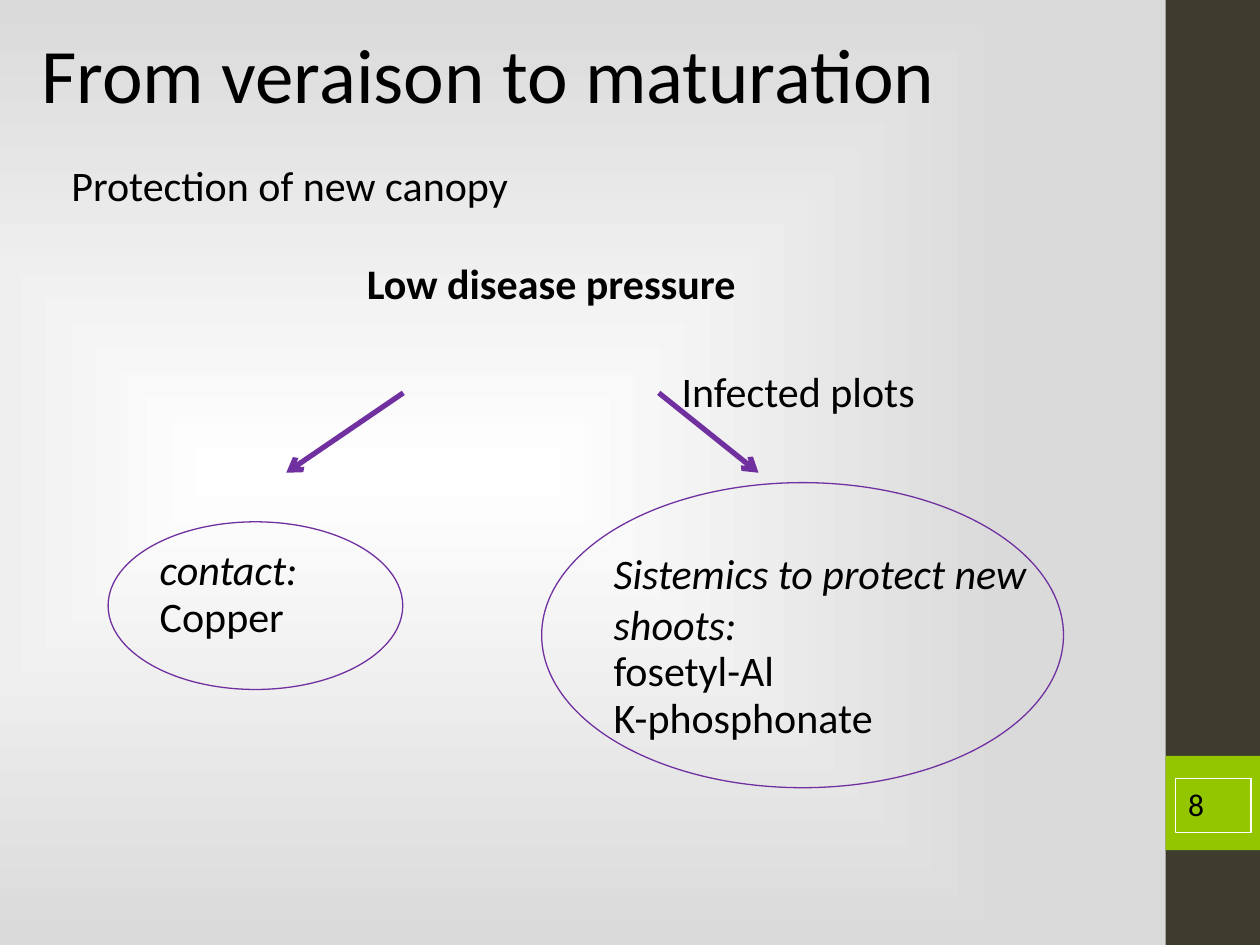
from dataclasses import dataclass

from lxml import etree
from pptx import Presentation
from pptx.dml.color import RGBColor
from pptx.enum.shapes import MSO_CONNECTOR, MSO_SHAPE
from pptx.enum.text import MSO_ANCHOR, PP_ALIGN
from pptx.oxml.ns import qn
from pptx.util import Cm, Pt

RECT, OVAL = MSO_SHAPE.RECTANGLE, MSO_SHAPE.OVAL
LINE = MSO_CONNECTOR.STRAIGHT
LEFT, MID = PP_ALIGN.LEFT, PP_ALIGN.CENTER
TOP = MSO_ANCHOR.TOP


@dataclass(frozen=True)
class Theme:
    font: str = "Calibri"
    ink: str = "000000"
    white: str = "FFFFFF"
    gray: str = "DADADA"
    dark: str = "3E3D2D"
    green: str = "94C600"
    purple: str = "7030A0"
    title: int = 44
    body: int = 24
    number: int = 18
    thin: float = 0.75
    thick: float = 3
    tight: float = 0.93


THEME = Theme()


def color(code):
    return RGBColor.from_string(code)


def paint_back(slide):
    fill = slide.background.fill
    fill.gradient()
    for stop, code in zip(fill.gradient_stops, (THEME.white, THEME.gray)):
        stop.color.rgb = color(code)
    for stop, place in zip(fill.gradient_stops, (0, 1)):
        stop.position = place
    grad = next(slide.element.iter(qn("a:gradFill")))
    grad.remove(grad.find(qn("a:lin")))
    shade = etree.SubElement(grad, qn("a:path"), path="shape")
    etree.SubElement(shade, qn("a:fillToRect"),
                     l="30000", t="50000", r="70000", b="50000")


def add_form(shapes, kind, box, fill=None, line=None):
    form = shapes.add_shape(kind, *map(Cm, box))
    form.shadow.inherit = False
    if fill:
        form.fill.solid()
        form.fill.fore_color.rgb = color(fill)
    else:
        form.fill.background()
    if line:
        form.line.color.rgb = color(line)
        form.line.width = Pt(THEME.thin)
    else:
        form.line.fill.background()
    return form


def put_text(para, text, size=THEME.body, bold=False, slant=False,
             align=LEFT, space=THEME.tight):
    para.alignment = align
    para.line_spacing = space
    run = para.add_run()
    run.text = text
    font = run.font
    font.name, font.size = THEME.font, Pt(size)
    font.bold, font.italic = bold, slant
    font.color.rgb = color(THEME.ink)


def add_text(shapes, box, *lines, **style):
    frame = shapes.add_textbox(*map(Cm, box)).text_frame
    frame.word_wrap = True
    put_text(frame.paragraphs[0], lines[0], **style)
    for line in lines[1:]:
        put_text(frame.add_paragraph(), line)


def add_arrow(shapes, *ends):
    arrow = shapes.add_connector(LINE, *map(Cm, ends))
    arrow.line.color.rgb = color(THEME.purple)
    arrow.line.width = Pt(THEME.thick)
    etree.SubElement(arrow.line._get_or_add_ln(), qn("a:tailEnd"), type="arrow")
    etree.SubElement(arrow._element.spPr, qn("a:effectLst"))


def add_choice(shapes, oval, box, *lines, **style):
    group = shapes.add_group_shape().shapes
    add_text(group, box, *lines, slant=True, **style)
    add_form(group, OVAL, oval, line=THEME.purple)


def add_number(shapes, text):
    form = add_form(shapes, RECT, (23.7, 15.7, 1.52, 1.09), line=THEME.white)
    frame = form.text_frame
    frame.vertical_anchor = TOP
    put_text(frame.paragraphs[0], text, size=THEME.number, space=1.0)


def main():
    deck = Presentation()
    deck.slide_width, deck.slide_height = Cm(25.4), Cm(19.05)
    slide = deck.slides.add_slide(deck.slide_layouts[6])
    shapes = slide.shapes
    paint_back(slide)

    add_form(shapes, RECT, (23.5, 0, 1.9, 19.05), fill=THEME.dark)
    add_form(shapes, RECT, (23.5, 15.24, 1.9, 1.9), fill=THEME.green)
    add_text(shapes, (0.58, 0.58, 21.03, 2.01),
             "From veraison to maturation", size=THEME.title)
    add_text(shapes, (0.79, 5.16, 20.65, 1.22),
             "Low disease pressure", bold=True, align=MID)
    add_arrow(shapes, 8.13, 7.92, 5.77, 9.53)
    add_arrow(shapes, 13.28, 7.92, 15.29, 9.53)
    add_number(shapes, "8")
    add_text(shapes, (13.49, 7.34, 7.75, 1.93), "Infected plots")
    add_text(shapes, (1.19, 3.18, 12.09, 1.22), "Protection of new canopy")
    add_choice(shapes, (2.18, 10.52, 5.94, 3.38), (2.97, 10.92, 4.95, 3.2),
               "contact:", "Copper")
    add_choice(shapes, (10.92, 9.73, 10.52, 6.15), (12.12, 10.92, 9.32, 4.22),
               "Sistemics to protect new shoots:", "fosetyl-Al",
               "K-phosphonate", space=1.0)
    deck.save("out.pptx")


if __name__ == "__main__":
    main()
